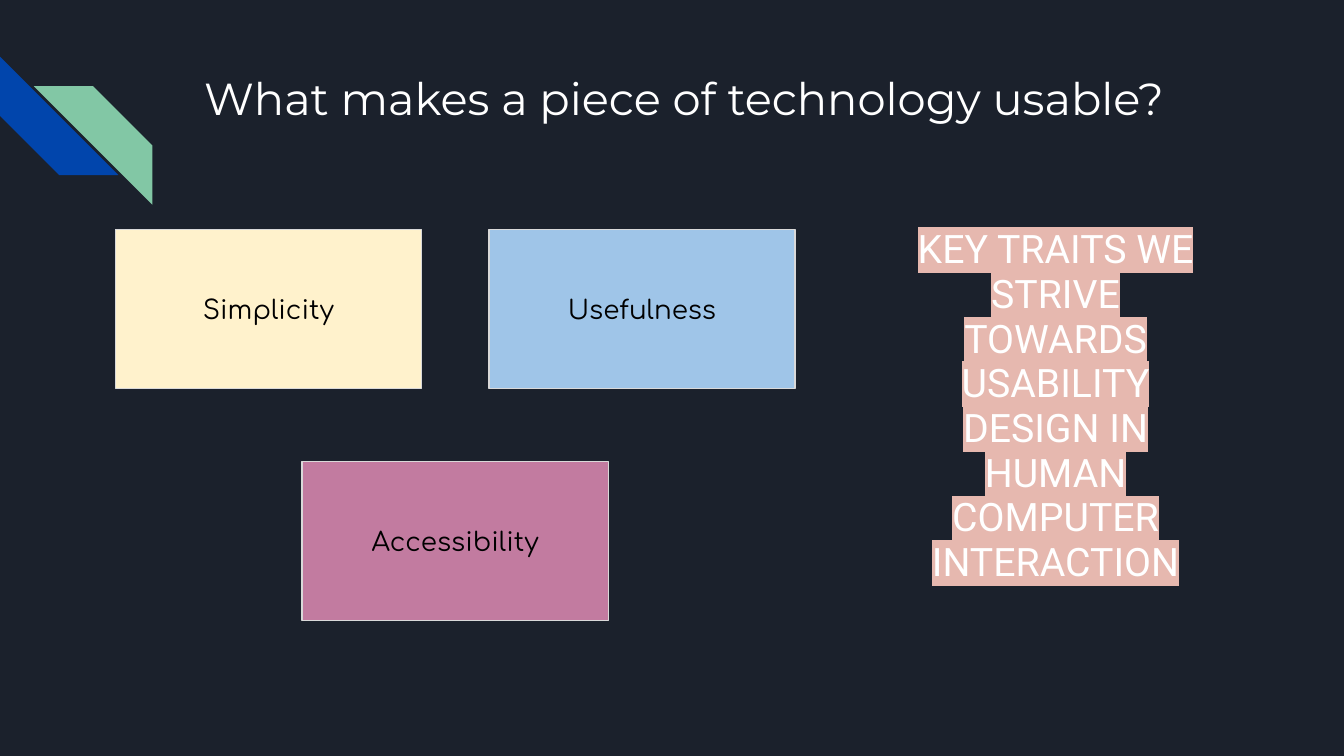
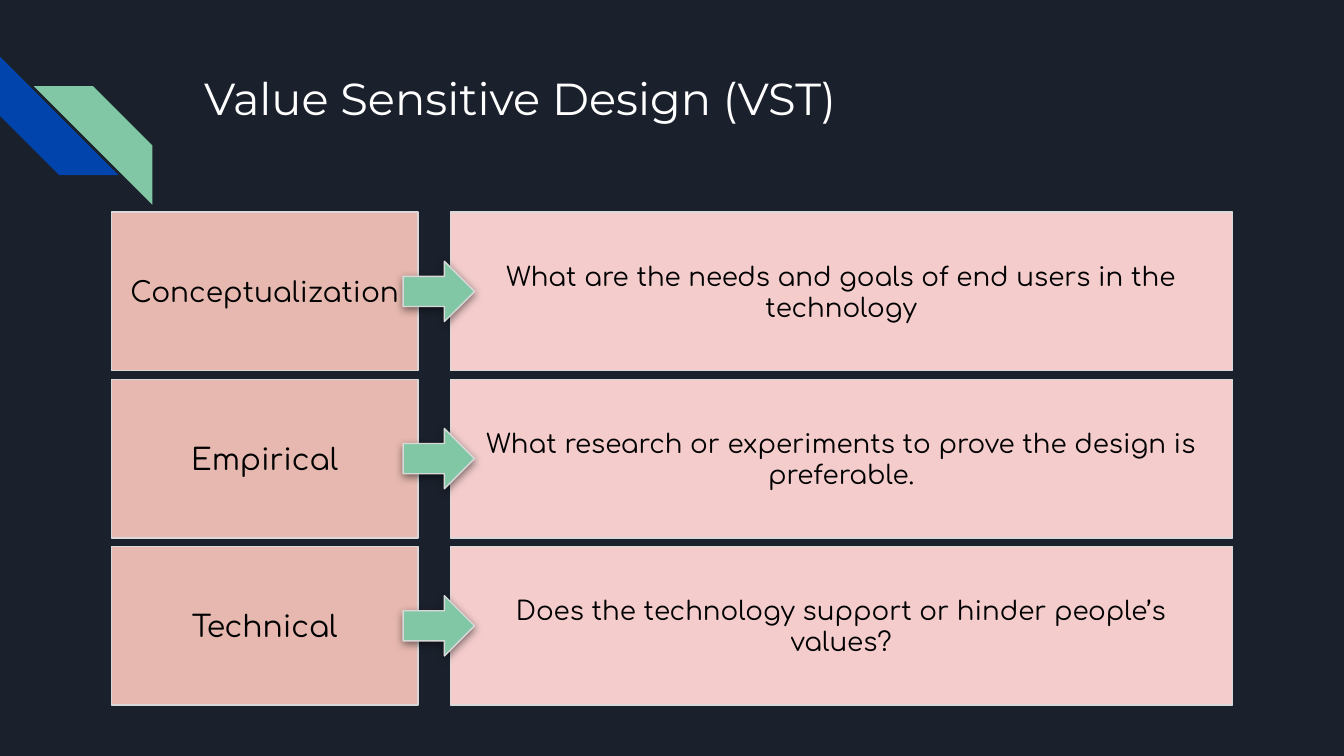
"""Build two slides on usable technology and value sensitive design."""
from lxml import etree
from pptx import Presentation
from pptx.dml.color import RGBColor
from pptx.enum.shapes import MSO_SHAPE
from pptx.enum.text import MSO_ANCHOR, PP_ALIGN
from pptx.oxml.ns import qn
from pptx.util import Cm, Pt

RECTANGLE = MSO_SHAPE.RECTANGLE
ARROW = MSO_SHAPE.RIGHT_ARROW
STRIPE = MSO_SHAPE.DIAGONAL_STRIPE
LEFT, CENTER = PP_ALIGN.LEFT, PP_ALIGN.CENTER
TOP, MIDDLE = MSO_ANCHOR.TOP, MSO_ANCHOR.MIDDLE

NAVY, BLUE, GREEN = "1B212C", "0145AC", "82C7A5"
WHITE, BLACK, BORDER = "FFFFFF", "000000", "D9D9D9"
ROSE, PINK = "E6B8AF", "F4CCCC"
TITLE_FONT, BODY_FONT, BOX_FONT = "Montserrat", "Roboto", "Comfortaa"

STRIPES = [(0, 1.07, 270, BLUE), (0.64, 1.63, 90, GREEN)]
STRIPE_SIZE = 2.24
BOX_WIDTH, BOX_HEIGHT = 5.79, 3

TRAITS_TITLE = "What makes a piece of technology usable?"
TRAITS = [("Simplicity", "FFF2CC"), ("Usefulness", "9FC5E8"), ("Accessibility", "C27BA0")]
TRAITS_LEFT, TRAITS_TOP = 2.18, 4.34
TRAITS_STEP_X, TRAITS_STEP_Y = 7.06, 4.39
TRAITS_NOTE = "KEY TRAITS WE STRIVE TOWARDS USABILITY DESIGN IN HUMAN COMPUTER INTERACTION"

VALUES_TITLE = "Value Sensitive Design (VST)"
VALUES = [
    ("Conceptualization", 15, "What are the needs and goals of end users in the technology"),
    ("Empirical", 16, "What research or experiments to prove the design is preferable."),
    ("Technical", 16, "Does the technology support or hinder people’s values?"),
]
VALUES_LEFT, VALUES_TOP, VALUES_STEP = 2.11, 4.01, 3.16
QUESTION_LEFT, QUESTION_WIDTH = 8.51, 14.78
ARROW_LEFT, ARROW_WIDTH, ARROW_HEIGHT = 7.62, 1.35, 1.14


def color(value):
    return RGBColor.from_string(value)


def write(shape, text, font, size, ink, align, anchor):
    frame = shape.text_frame
    frame.text = text
    frame.word_wrap = True
    frame.vertical_anchor = anchor
    frame.margin_left = frame.margin_right = Cm(0.25)
    frame.margin_top = frame.margin_bottom = Cm(0.25)
    para = frame.paragraphs[0]
    para.alignment = align
    span = para.runs[0]
    span.font.name = font
    span.font.size = Pt(size)
    span.font.color.rgb = color(ink)
    return para


def add_shape(page, kind, left, top, width, height, fill, line=None):
    shape = page.shapes.add_shape(kind, Cm(left), Cm(top), Cm(width), Cm(height))
    shape.shadow.inherit = False
    shape.fill.solid()
    shape.fill.fore_color.rgb = color(fill)
    if line:
        shape.line.color.rgb = color(line)
        shape.line.width = Pt(0.75)
    else:
        shape.line.fill.background()
    return shape


def add_box(page, text, left, top, width, fill, size=14):
    box = add_shape(page, RECTANGLE, left, top, width, BOX_HEIGHT, fill, BORDER)
    write(box, text, BOX_FONT, size, BLACK, CENTER, MIDDLE)


def add_text(page, text, left, top, width, height, font, size, align):
    box = page.shapes.add_textbox(Cm(left), Cm(top), Cm(width), Cm(height))
    return write(box, text, font, size, WHITE, align, TOP)


def add_color(parent, value):
    return etree.SubElement(parent, qn("a:srgbClr"), val=value)


def highlight(span, value):
    properties = span.font._element
    mark = etree.Element(qn("a:highlight"))
    add_color(mark, value)
    properties.find(qn("a:solidFill")).addnext(mark)


def drop_shadow(shape):
    effects = shape._element.spPr.find(qn("a:effectLst"))
    shadow = etree.SubElement(
        effects, qn("a:outerShdw"), blurRad=str(Pt(4.5)), dist=str(Pt(1.5)),
        dir="5400000", algn="bl", rotWithShape="0")
    etree.SubElement(add_color(shadow, BLACK), qn("a:alpha"), val="50000")


def add_page(deck, title):
    page = deck.slides.add_slide(deck.slide_layouts[6])
    page.background.fill.solid()
    page.background.fill.fore_color.rgb = color(NAVY)
    for left, top, turn, fill in STRIPES:
        stripe = add_shape(page, STRIPE, left, top, STRIPE_SIZE, STRIPE_SIZE, fill)
        stripe.rotation = turn
    add_text(page, title, 3.61, 1.09, 19.56, 2.54, TITLE_FONT, 24, LEFT)
    return page


def build_traits(deck):
    page = add_page(deck, TRAITS_TITLE)
    note = add_text(page, TRAITS_NOTE, 16.76, 4.06, 6.38, 7.65, BODY_FONT, 21, CENTER)
    note.line_spacing = 0.95
    note.space_after = Pt(12)
    highlight(note.runs[0], ROSE)
    for index, (trait, fill) in enumerate(TRAITS):
        row, column = divmod(index, 2)
        left = TRAITS_LEFT + (column + row / 2) * TRAITS_STEP_X
        add_box(page, trait, left, TRAITS_TOP + row * TRAITS_STEP_Y, BOX_WIDTH, fill)


def build_values(deck):
    page = add_page(deck, VALUES_TITLE)
    for row, (stage, size, question) in enumerate(VALUES):
        top = VALUES_TOP + row * VALUES_STEP
        add_box(page, stage, VALUES_LEFT, top, BOX_WIDTH, ROSE, size)
        add_box(page, question, QUESTION_LEFT, top, QUESTION_WIDTH, PINK)
        arrow_top = top + (BOX_HEIGHT - ARROW_HEIGHT) / 2
        arrow = add_shape(page, ARROW, ARROW_LEFT, arrow_top, ARROW_WIDTH, ARROW_HEIGHT,
                          GREEN, BORDER)
        drop_shadow(arrow)


def main():
    deck = Presentation()
    deck.slide_width, deck.slide_height = Cm(25.4), Cm(14.29)
    build_traits(deck)
    build_values(deck)
    deck.save("out.pptx")


if __name__ == "__main__":
    main()
